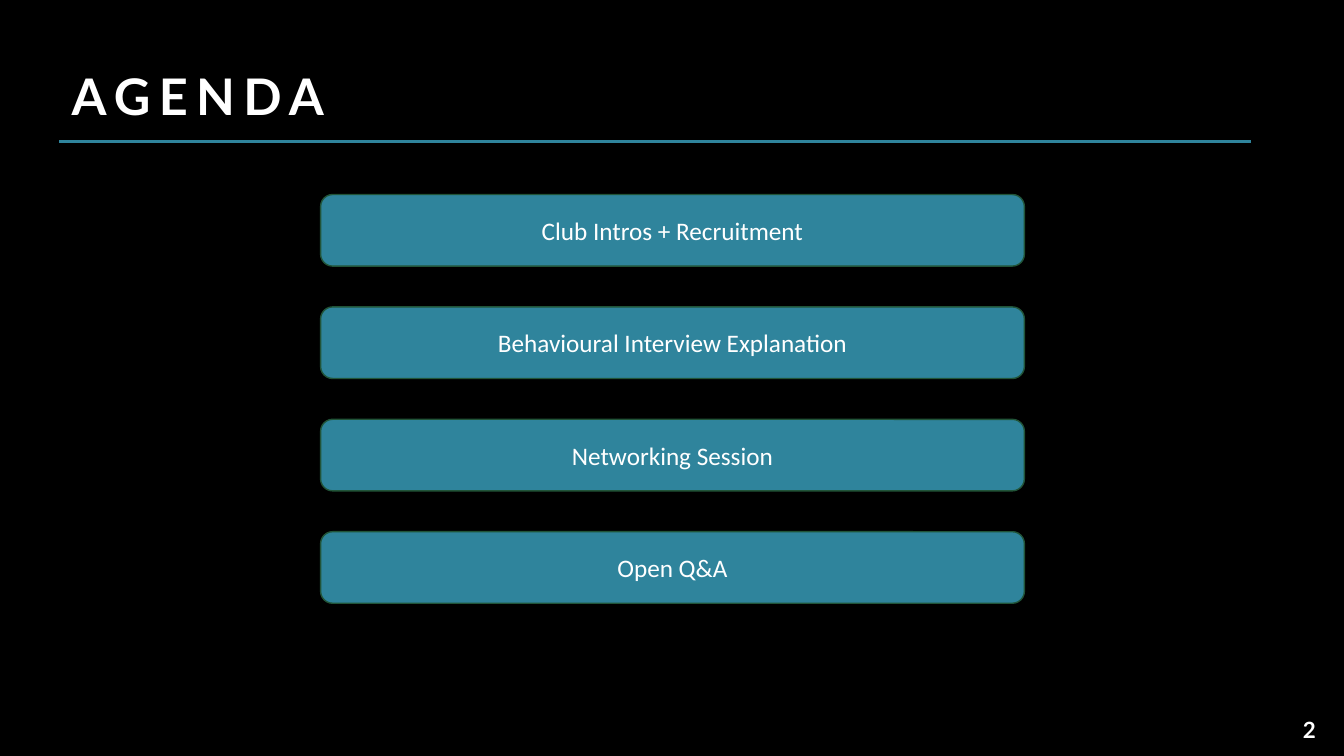
import dataclasses

import pptx
import pptx.dml.color
import pptx.enum.shapes
import pptx.enum.text
import pptx.oxml.ns
import pptx.shapes.autoshape
import pptx.slide
import pptx.text.text
import pptx.util
from lxml import etree

Inches = pptx.util.Inches
Anchor = pptx.enum.text.MSO_ANCHOR
Align = pptx.enum.text.PP_ALIGN

BLACK, WHITE, TEAL, DARK_GREEN = "000000", "FFFFFF", "2F849C", "215438"
ITEM_LEFT, ITEM_WIDTH, ITEM_HEIGHT = 3.18, 6.98, 0.71
FIRST_ITEM_TOP, ITEM_PITCH = 1.93, 1.115


@dataclasses.dataclass
class TextStyle:
    size: float
    font: str
    bold: bool = False
    align: Align = Align.CENTER
    anchor: Anchor = Anchor.MIDDLE


@dataclasses.dataclass
class AgendaItem:
    text: str
    position: int

    @property
    def top(self) -> float:
        return FIRST_ITEM_TOP + self.position * ITEM_PITCH


TITLE_STYLE = TextStyle(36, "Lato", True, Align.LEFT, Anchor.BOTTOM)
ITEM_STYLE = TextStyle(18, "Calibri")
NUMBER_STYLE = TextStyle(16, "Lato", True)
TOPICS = [
    "Club Intros + Recruitment",
    "Behavioural Interview Explanation",
    "Networking Session",
    "Open Q&A",
]


def color(value: str) -> pptx.dml.color.RGBColor:
    return pptx.dml.color.RGBColor.from_string(value)


def write(shape: pptx.shapes.autoshape.Shape, text: str, style: TextStyle) -> pptx.text.text._Run:
    frame = shape.text_frame
    frame.word_wrap = True
    frame.auto_size = pptx.enum.text.MSO_AUTO_SIZE.NONE
    frame.vertical_anchor = style.anchor
    paragraph = frame.paragraphs[0]
    paragraph.alignment = style.align
    run = paragraph.add_run()
    run.text = text
    run.font.size = pptx.util.Pt(style.size)
    run.font.name = style.font
    run.font.bold = style.bold
    run.font.color.rgb = color(WHITE)
    return run


def add_rule(slide: pptx.slide.Slide) -> None:
    rule = slide.shapes.add_connector(
        pptx.enum.shapes.MSO_CONNECTOR.STRAIGHT,
        Inches(0.59), Inches(1.4), Inches(12.41), Inches(1.4))
    rule.line.color.rgb = color(TEAL)
    rule.line.width = pptx.util.Pt(2.25)
    etree.SubElement(rule._element.spPr, pptx.oxml.ns.qn("a:effectLst"))


def add_title(slide: pptx.slide.Slide, text: str) -> None:
    title = slide.shapes.title
    title.left, title.top = Inches(0.61), Inches(0.36)
    title.width, title.height = Inches(11.83), Inches(0.94)
    run = write(title, text, TITLE_STYLE)
    run._r.get_or_add_rPr().set("spc", "600")
    title.text_frame.paragraphs[0].line_spacing = 1.2


def add_item(slide: pptx.slide.Slide, item: AgendaItem) -> None:
    shape = slide.shapes.add_shape(
        pptx.enum.shapes.MSO_SHAPE.ROUNDED_RECTANGLE,
        Inches(ITEM_LEFT), Inches(item.top), Inches(ITEM_WIDTH), Inches(ITEM_HEIGHT))
    shape.shadow.inherit = False
    shape.fill.solid()
    shape.fill.fore_color.rgb = color(TEAL)
    shape.line.color.rgb = color(DARK_GREEN)
    shape.line.width = pptx.util.Pt(1)
    write(shape, item.text, ITEM_STYLE)


def main() -> None:
    presentation = pptx.Presentation()
    presentation.slide_width = Inches(13.33)
    presentation.slide_height = Inches(7.5)
    slide = presentation.slides.add_slide(presentation.slide_layouts.get_by_name("Title Only"))
    slide.background.fill.solid()
    slide.background.fill.fore_color.rgb = color(BLACK)

    # Heading
    add_rule(slide)
    add_title(slide, "AGENDA")

    # Agenda items
    for position, topic in enumerate(TOPICS):
        add_item(slide, AgendaItem(topic, position))

    # Slide number
    number = slide.shapes.add_textbox(Inches(12.64), Inches(7), Inches(0.69), Inches(0.47))
    write(number, "2", NUMBER_STYLE)

    presentation.save("out.pptx")


if __name__ == "__main__":
    main()
